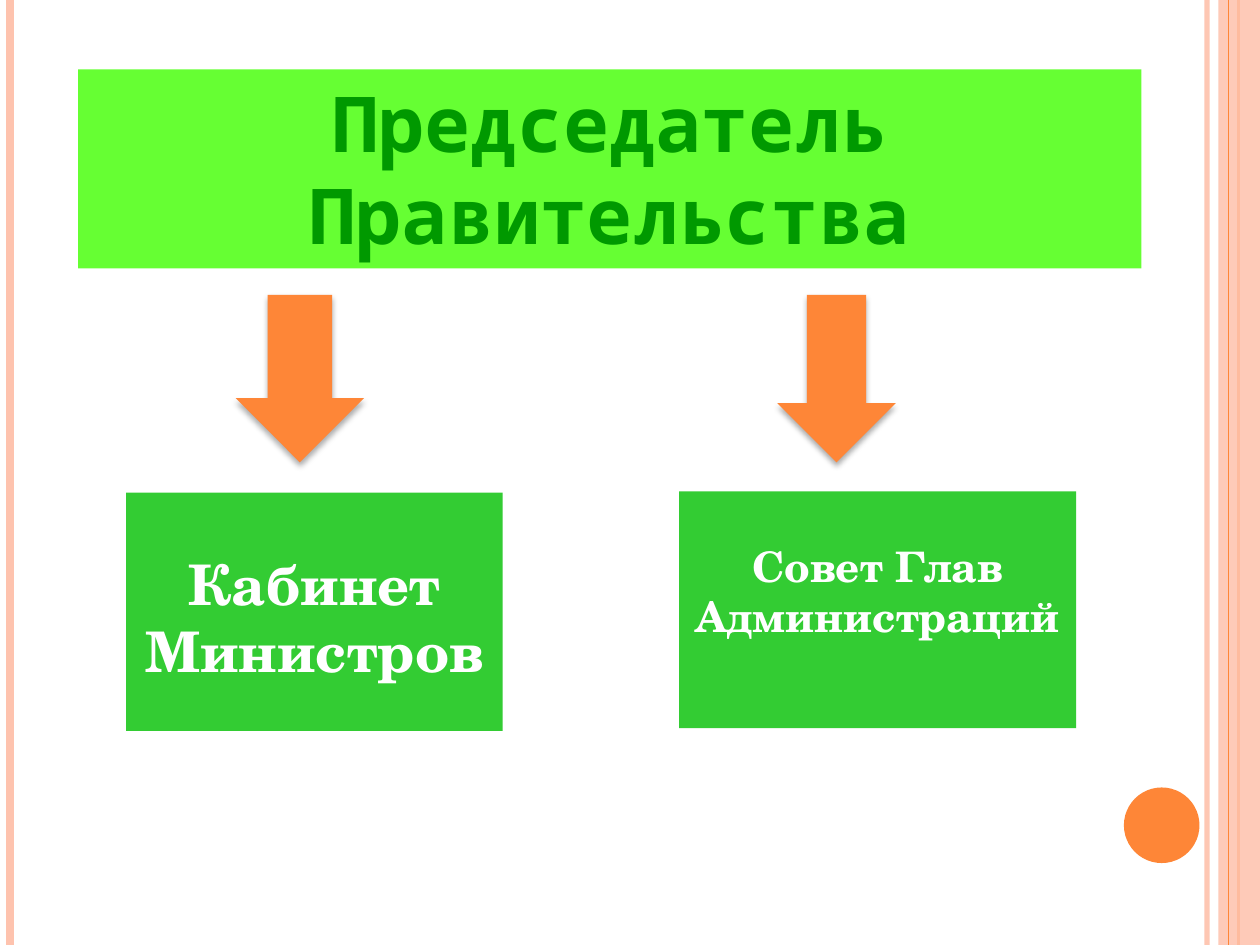
from lxml import etree
from pptx import Presentation
from pptx.dml.color import RGBColor
from pptx.enum import shapes, text
from pptx.oxml import parse_xml
from pptx.oxml.ns import nsdecls, qn
from pptx.util import Inches, Pt

PEACH = RGBColor(0xFE, 0xC3, 0xAE)
ORANGE = RGBColor(0xFE, 0x86, 0x37)
GREEN = RGBColor(0x33, 0xCC, 0x33)
LIME = RGBColor(0x66, 0xFF, 0x33)
DARK_GREEN = RGBColor(0x00, 0x99, 0x00)
WHITE = RGBColor(0xFF, 0xFF, 0xFF)
SHAPE = shapes.MSO_SHAPE


def set_alpha(fill, percent):
    color = fill._xPr.find(qn("a:solidFill"))[0]
    etree.SubElement(color, qn("a:alpha")).set("val", str(percent * 1000))


def add_filled(slide, kind, box, color):
    filled = slide.shapes.add_shape(kind, *(Inches(v) for v in box))
    filled.shadow.inherit = False
    filled.fill.solid()
    filled.fill.fore_color.rgb = color
    filled.line.fill.background()
    return filled


def add_stripe(slide, x, top, height, color, width, alpha=100):
    stripe = slide.shapes.add_connector(
        shapes.MSO_CONNECTOR.STRAIGHT,
        Inches(x), Inches(top), Inches(x), Inches(top + height))
    stripe.line.color.rgb = color
    stripe.line.width = Pt(width)
    if alpha < 100:
        set_alpha(stripe.line.fill, alpha)
    etree.SubElement(stripe._element.spPr, qn("a:effectLst"))


def add_frame(slide, box):
    left, top, width, height = box
    right = left + width
    add_stripe(slide, right - 0.42, top, height, PEACH, 3, 93)
    add_stripe(slide, left + 0.08, top, height, PEACH, 4.5)
    add_stripe(slide, right - 0.17, top, height, ORANGE, 1.5)
    band = add_filled(slide, SHAPE.RECTANGLE,
                      (right - 0.33, top, 0.33, height), PEACH)
    set_alpha(band.fill, 87)
    add_stripe(slide, right - 0.25, top, height, ORANGE, 0.75)
    add_filled(slide, SHAPE.OVAL,
               (right - 1.08, top + height - 1.25, 0.6, 0.6), ORANGE)


def add_block(slide, box, wording, fill, font_name, size, color, inset_top=0.05):
    block = add_filled(slide, SHAPE.RECTANGLE, box, fill)
    frame = block.text_frame
    frame.word_wrap = True
    frame.vertical_anchor = text.MSO_ANCHOR.TOP
    frame.margin_top = Inches(inset_top)
    frame.text = wording
    paragraph = frame.paragraphs[0]
    paragraph.alignment = text.PP_ALIGN.CENTER
    font = paragraph.runs[0].font
    font.name = font_name
    font.size = Pt(size)
    font.bold = True
    font.color.rgb = color


def add_down_arrow(slide, box):
    arrow = add_filled(slide, SHAPE.DOWN_ARROW, box, ORANGE)
    effects = arrow._element.spPr.find(qn("a:effectLst"))
    effects.append(parse_xml(
        f'<a:outerShdw {nsdecls("a")} blurRad="{Pt(3.5)}" dist="{Pt(2.2)}" '
        'dir="5400000" rotWithShape="0"><a:srgbClr val="000000">'
        '<a:alpha val="32000"/></a:srgbClr></a:outerShdw>'))


def main():
    deck = Presentation()
    deck.slide_width, deck.slide_height = Inches(10), Inches(7.5)
    slide = deck.slides.add_slide(deck.slide_layouts[6])
    add_frame(slide, (0, 0, 10, 7.5))
    bodies = [
        ((1, 3.91, 2.99, 1.89), "Кабинет Министров", 32, 0.45),
        ((5.39, 3.9, 3.15, 1.88), "Совет Глав Администраций", 24, 0.39),
    ]
    for box, wording, size, inset_top in bodies:
        add_block(slide, box, wording, GREEN, "TeX Gyre Schola", size, WHITE, inset_top)
    add_block(slide, (0.62, 0.55, 8.44, 1.58), "Председатель Правительства",
              LIME, "Noto Sans Mono", 44, DARK_GREEN)
    for left, width in ((1.87, 1.02), (6.17, 0.94)):
        add_down_arrow(slide, (left, 2.34, width, 1.33))
    deck.save("out.pptx")


if __name__ == "__main__":
    main()
